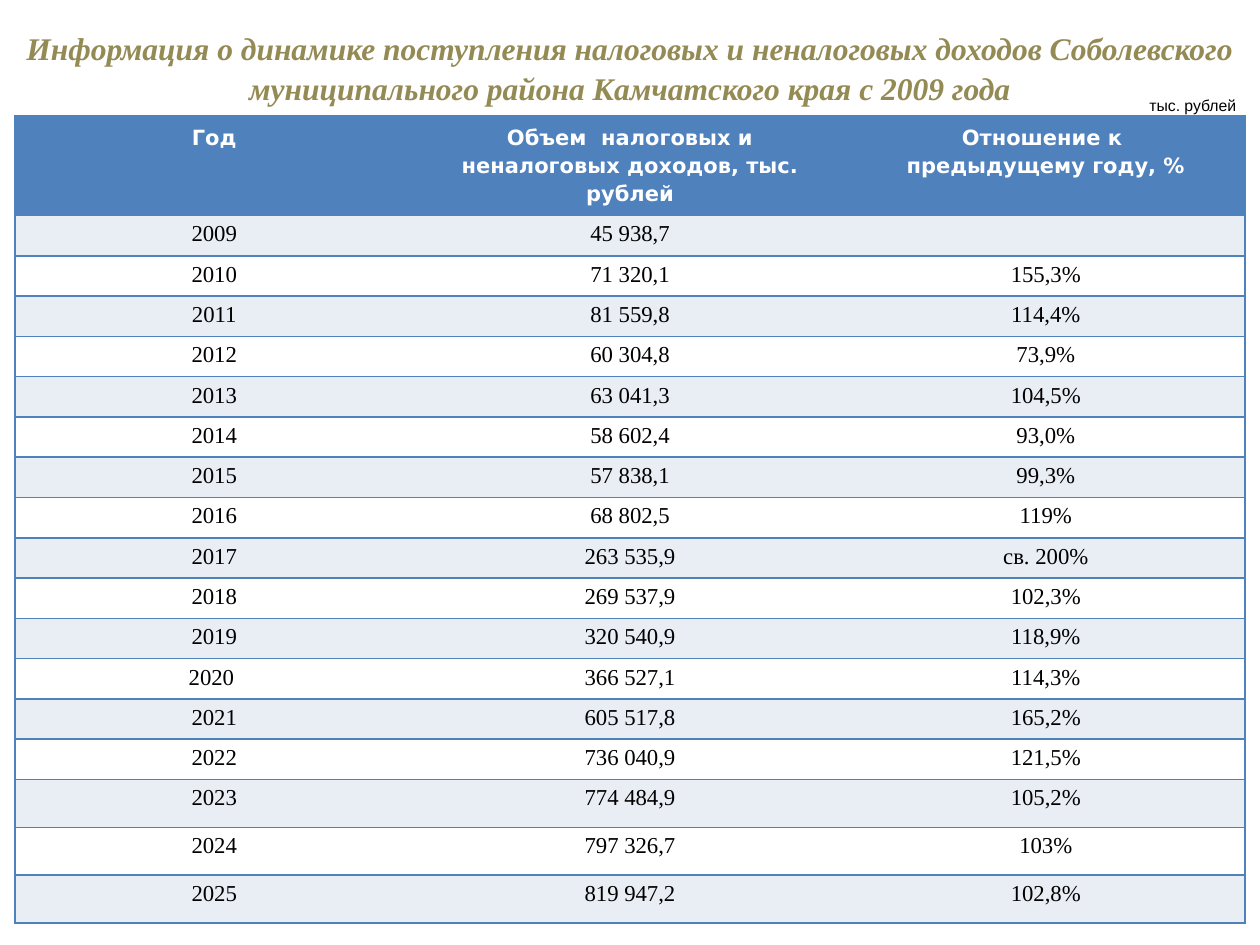
from typing import NamedTuple

from lxml.etree import SubElement
from pptx import Presentation
from pptx.dml.color import RGBColor
from pptx.enum.text import MSO_ANCHOR, MSO_AUTO_SIZE, PP_ALIGN
from pptx.oxml.ns import qn
from pptx.util import Inches, Pt

BLUE = RGBColor(0x4F, 0x81, 0xBD)
BAND = RGBColor(0xE9, 0xED, 0xF4)
WHITE = RGBColor(0xFF, 0xFF, 0xFF)
BLACK = RGBColor(0x00, 0x00, 0x00)
OLIVE = RGBColor(0x94, 0x8A, 0x54)

TITLE = ("Информация о динамике поступления налоговых и неналоговых доходов "
         "Соболевского муниципального района Камчатского края с 2009 года")
UNIT = "тыс. рублей"
HEADERS = ("Год", "Объем  налоговых и неналоговых доходов, тыс. рублей",
           "Отношение к \nпредыдущему году, %")
COL_WIDTHS = (3.16, 3.44, 3.16)
HEADER_HEIGHT, ROW_HEIGHT, TALL_HEIGHT = 0.79, 0.32, 0.38
TALL_ROWS = 3


class Income(NamedTuple):
    year: str
    volume: str
    ratio: str


class TextStyle(NamedTuple):
    font: str
    size: float
    color: RGBColor
    bold: bool = False
    italic: bool = False
    align: PP_ALIGN = PP_ALIGN.CENTER
    spacing: float = 1.0


INCOMES = (
    Income("2009", "45 938,7", ""),
    Income("2010", "71 320,1", "155,3%"),
    Income("2011", "81 559,8", "114,4%"),
    Income("2012", "60 304,8", "73,9%"),
    Income("2013", "63 041,3", "104,5%"),
    Income("2014", "58 602,4", "93,0%"),
    Income("2015", "57 838,1", "99,3%"),
    Income("2016", "68 802,5", "119%"),
    Income("2017", "263 535,9", "св. 200%"),
    Income("2018", "269 537,9", "102,3%"),
    Income("2019", "320 540,9", "118,9%"),
    Income("2020 ", "366 527,1", "114,3%"),
    Income("2021", "605 517,8", "165,2%"),
    Income("2022", "736 040,9", "121,5%"),
    Income("2023", "774 484,9", "105,2%"),
    Income("2024", "797 326,7", "103%"),
    Income("2025", "819 947,2", "102,8%"),
)

TITLE_STYLE = TextStyle("Times New Roman", 18, OLIVE, True, True, spacing=1.05)
UNIT_STYLE = TextStyle("Arial", 9, BLACK, align=PP_ALIGN.RIGHT)
HEADER_STYLE = TextStyle("DejaVu Sans", 12, WHITE, True, spacing=1.15)
BODY_STYLE = TextStyle("Times New Roman", 13, BLACK)


def write_text(tf, text: str, style: TextStyle) -> None:
    tf.text = text
    for p in tf.paragraphs:
        p.alignment = style.align
        p.line_spacing = style.spacing
        for r in p.runs:
            r.font.name = style.font
            r.font.size = Pt(style.size)
            r.font.bold = style.bold
            r.font.italic = style.italic
            r.font.color.rgb = style.color
        if not p.runs:
            SubElement(p._p, qn("a:endParaRPr"), sz=str(int(style.size * 100)))


def set_borders(cell, left: bool, right: bool) -> None:
    tc_pr = cell._tc.get_or_add_tcPr()
    for side, shown in (("L", left), ("R", right), ("T", True), ("B", True)):
        ln = SubElement(tc_pr, qn(f"a:ln{side}"), w=str(Pt(1)))
        if shown:
            fill = SubElement(ln, qn("a:solidFill"))
            SubElement(fill, qn("a:srgbClr"), val=str(BLUE))
        else:
            SubElement(ln, qn("a:noFill"))


def add_income_table(s) -> None:
    records = (HEADERS, *INCOMES)
    heights = ([HEADER_HEIGHT] + [ROW_HEIGHT] * (len(INCOMES) - TALL_ROWS)
               + [TALL_HEIGHT] * TALL_ROWS)
    table = s.shapes.add_table(
        len(records), len(COL_WIDTHS), Inches(0.12), Inches(0.92),
        Inches(sum(COL_WIDTHS)), Inches(sum(heights))).table
    table.horz_banding = False
    for column, width in zip(table.columns, COL_WIDTHS):
        column.width = Inches(width)
    last = len(COL_WIDTHS) - 1
    for i, (record, height) in enumerate(zip(records, heights)):
        table.rows[i].height = Inches(height)
        style = BODY_STYLE if i else HEADER_STYLE
        color = BLUE if i == 0 else BAND if i % 2 else WHITE
        for j, text in enumerate(record):
            cell = table.cell(i, j)
            write_text(cell.text_frame, text, style)
            set_borders(cell, j == 0, j == last)
            cell.fill.solid()
            cell.fill.fore_color.rgb = color


def add_unit_label(s) -> None:
    label = s.shapes.add_textbox(Inches(9.01), Inches(0.71), Inches(0.9), Inches(0.25))
    tf = label.text_frame
    tf.word_wrap = False
    tf.auto_size = MSO_AUTO_SIZE.SHAPE_TO_FIT_TEXT
    write_text(tf, UNIT, UNIT_STYLE)


def format_title(s) -> None:
    title = s.shapes.title
    title.left, title.top = Inches(0), Inches(0.13)
    title.width, title.height = Inches(10), Inches(0.8)
    tf = title.text_frame
    tf.word_wrap = True
    tf.auto_size = MSO_AUTO_SIZE.NONE
    tf.vertical_anchor = MSO_ANCHOR.MIDDLE
    write_text(tf, TITLE, TITLE_STYLE)


def main() -> None:
    prs = Presentation()
    prs.slide_width, prs.slide_height = Inches(10), Inches(7.5)
    s = prs.slides.add_slide(prs.slide_layouts[5])
    format_title(s)
    add_income_table(s)
    add_unit_label(s)
    prs.save("out.pptx")


if __name__ == "__main__":
    main()
